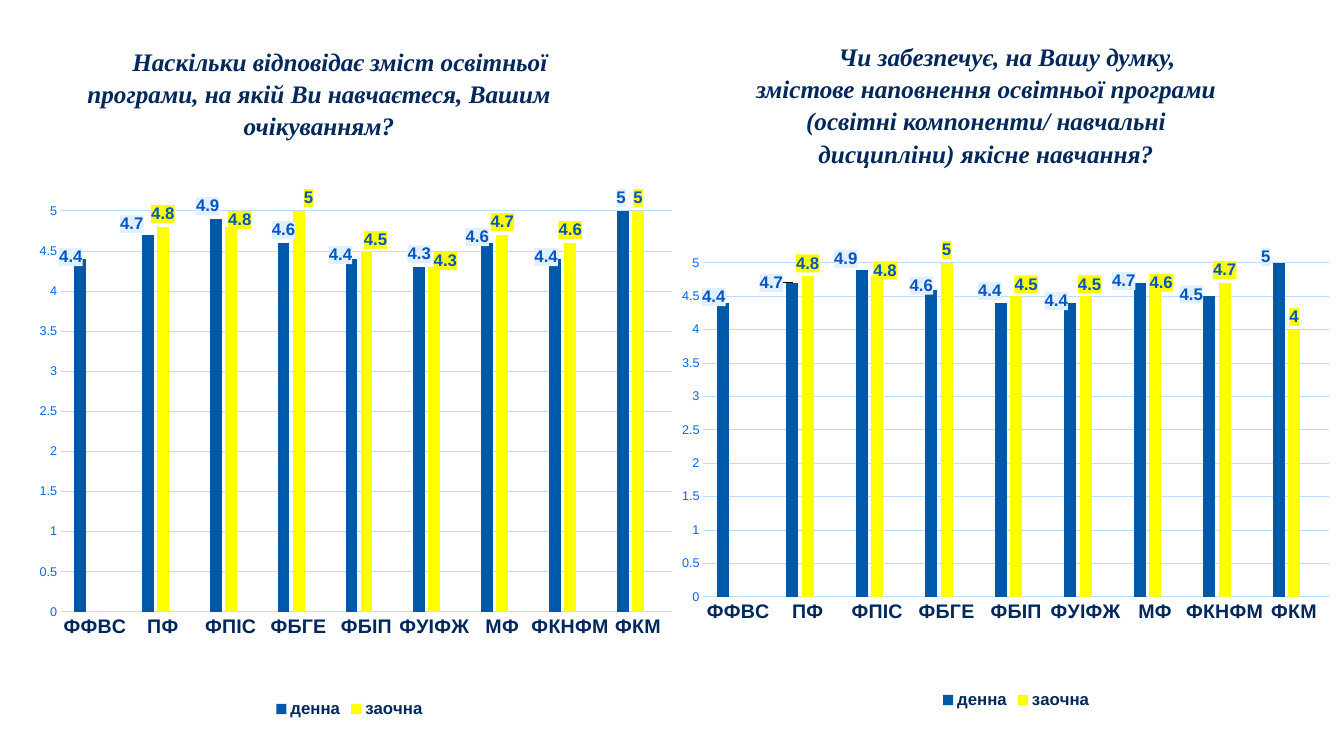
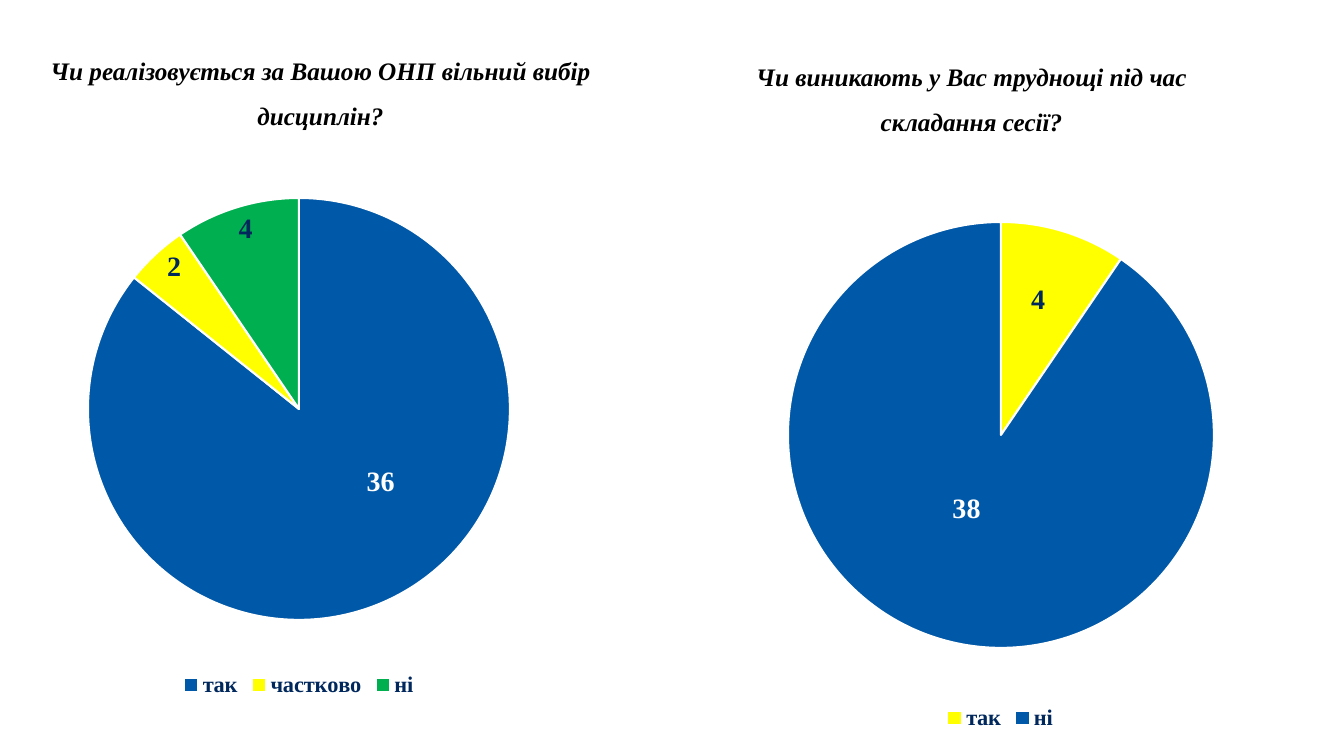
import lxml.etree
import pptx
import pptx.chart.data
import pptx.dml.color
import pptx.enum.chart
import pptx.enum.text
import pptx.oxml
import pptx.oxml.ns
import pptx.util

PX = 914400 / 100.8
SERIF, SANS = "Times New Roman", "Arial"
COLORS = {
    "navy": "01285C", "black": "000000", "white": "FFFFFF", "axis": "0367EC",
    "grid": "C1DBFE", "label": "0255C3", "pale": "E0F0FE", "blue": "0058A8",
    "yellow": "FFFF00", "green": "00B050",
}
FACULTIES = ["ФФВС", "ПФ", "ФПІС", "ФБГЕ", "ФБІП", "ФУІФЖ", "МФ", "ФКНФМ", "ФКМ"]
SERIES_STYLES = [("blue", "pale"), ("yellow", "yellow")]
PLAIN_TABLE = "{2D5ABB26-0587-4C30-8999-92F81FD0307C}"
NO_LEADERS = ('<c:extLst><c:ext uri="{CE6537A1-D6FC-4f65-9D91-7224C49458BB}" '
              'xmlns:c15="http://schemas.microsoft.com/office/drawing/2012/chart">'
              '<c15:showLeaderLines val="0"/></c:ext></c:extLst>')
qn = pptx.oxml.ns.qn


def px(n):
    """Turn pixels into EMU."""
    return pptx.util.Emu(round(n * PX))


def rgb(name):
    """Look up a palette colour."""
    return pptx.dml.color.RGBColor.from_string(COLORS[name])


def xml(markup):
    """Parse a chart fragment with its namespaces declared."""
    ns = pptx.oxml.ns.nsdecls("c", "a")
    head, tail = markup.split(">", 1)
    return pptx.oxml.parse_xml(f"{head} {ns}>{tail}")


def set_font(font, size, color, bold=False, italic=False, name=SANS):
    """Apply one text format to a font."""
    font.size, font.bold, font.italic, font.name = pptx.util.Pt(size), bold, italic, name
    font.color.rgb = rgb(color)


def add_text(slide, box, text, color="black", spacing=1.5, indent=0, middle=True):
    """Write a centred question heading in a box."""
    tf = slide.shapes.add_textbox(*map(px, box)).text_frame
    tf.word_wrap = True
    anchor = pptx.enum.text.MSO_ANCHOR
    tf.vertical_anchor = anchor.MIDDLE if middle else anchor.TOP
    p = tf.paragraphs[0]
    p.alignment = pptx.enum.text.PP_ALIGN.CENTER
    p.line_spacing, p.space_after = spacing, pptx.util.Pt(8)
    p._p.get_or_add_pPr().set("indent", str(px(indent)))
    r = p.add_run()
    r.text = text
    set_font(r.font, 18, color, True, True, SERIF)


def layout_table(slide, heights):
    """Add the clear two-column table that holds the charts."""
    box = (51, 165, 1260, sum(heights))
    table = slide.shapes.add_table(len(heights), 2, *map(px, box)).table
    table.first_row = table.horz_banding = False
    table._tbl.tblPr.find(qn("a:tableStyleId")).text = PLAIN_TABLE
    for row, height in zip(table.rows, heights):
        row.height = px(height)
    for cell in table.iter_cells():
        cell.fill.background()


def add_chart(slide, kind, box, plot, data, legend_font, hidden):
    """Add a chart with a fixed inner plot area and a bottom legend."""
    x, y, w, h = box
    chart = slide.shapes.add_chart(kind, *map(px, box), data).chart
    chart.has_title = False
    set_font(chart.font, 10, "navy")
    chart.has_legend = True
    chart.legend.position = pptx.enum.chart.XL_LEGEND_POSITION.BOTTOM
    chart.legend.include_in_layout = False
    set_font(chart.legend.font, **legend_font)
    position = chart.legend._element.find(qn("c:legendPos"))
    for i in reversed(hidden):
        position.addnext(xml(f'<c:legendEntry><c:idx val="{i}"/>'
                             '<c:delete val="1"/></c:legendEntry>'))
    area = chart._chartSpace.find(".//" + qn("c:plotArea"))
    for old in area.findall(qn("c:layout")):
        area.remove(old)
    parts = zip("xywh", ((plot[0] - x) / w, (plot[1] - y) / h, plot[2] / w, plot[3] / h))
    sizes = "".join(f'<c:{k} val="{v:.4f}"/>' for k, v in parts)
    area.insert(0, xml('<c:layout><c:manualLayout><c:layoutTarget val="inner"/>'
                       '<c:xMode val="edge"/><c:yMode val="edge"/>'
                       f"{sizes}</c:manualLayout></c:layout>"))
    return chart


def shift_labels(series, shifts, box):
    """Move point labels by pixel offsets from their usual place."""
    for label in series._element.iter(qn("c:dLbl")):
        idx = label.find(qn("c:idx"))
        dx, dy = shifts[int(idx.get("val"))]
        idx.addnext(xml(f'<c:layout><c:manualLayout><c:x val="{dx / box[2]:.4f}"/>'
                        f'<c:y val="{dy / box[3]:.4f}"/></c:manualLayout></c:layout>'))


def style_axes(chart):
    """Format the axes and gridlines of a column chart."""
    cat, val = chart.category_axis, chart.value_axis
    for axis in (cat, val):
        axis.major_tick_mark = axis.minor_tick_mark = pptx.enum.chart.XL_TICK_MARK.NONE
    set_font(cat.tick_labels.font, 14, "navy", True)
    set_font(val.tick_labels.font, 9, "axis")
    val.minimum_scale, val.maximum_scale, val.major_unit = 0, 5, 0.5
    val.format.line.fill.background()
    for line in (cat.format.line, val.major_gridlines.format.line):
        line.color.rgb, line.width = rgb("grid"), pptx.util.Pt(0.75)


def column_panel(slide, box, plot, values, shifts):
    """Draw a column chart comparing full-time and part-time students."""
    data = pptx.chart.data.CategoryChartData()
    data.categories = FACULTIES
    for name, vals in zip(("денна", "заочна"), values):
        data.add_series(name, vals)
    data.add_series("Series 3", [None] * len(FACULTIES))
    chart = add_chart(slide, pptx.enum.chart.XL_CHART_TYPE.COLUMN_CLUSTERED, box, plot,
                      data, dict(size=12, color="navy", bold=True), [2])
    style_axes(chart)
    bars = chart.plots[0]
    bars.vary_by_categories, bars.gap_width, bars.overlap = False, 219, -27
    outside = pptx.enum.chart.XL_LABEL_POSITION.OUTSIDE_END
    for s, (color, back), moves in zip(bars.series, SERIES_STYLES, shifts):
        s.format.fill.solid()
        s.format.fill.fore_color.rgb = rgb(color)
        s.data_labels.show_value = True
        for d in [s.data_labels] + [s.points[i].data_label for i in moves]:
            set_font(d.font, 12, "label", True)
            d.position = outside
        shift_labels(s, moves, box)
        labels = s._element.find(qn("c:dLbls"))
        for tx in list(labels.iter(qn("c:txPr"))):
            for old in tx.getparent().findall(qn("c:spPr")):
                tx.getparent().remove(old)
            tx.addprevious(xml("<c:spPr><a:solidFill>"
                               f'<a:srgbClr val="{COLORS[back]}"/></a:solidFill></c:spPr>'))
        if s.values[0] == 0:
            labels.insert(0, xml('<c:dLbl><c:idx val="0"/><c:delete val="1"/></c:dLbl>'))
        labels.append(xml(NO_LEADERS))


def pie_panel(slide, box, plot, slices, shifts):
    """Draw a pie chart from (name, value, fill, label colour) slices."""
    data = pptx.chart.data.CategoryChartData()
    data.categories = [name for name, *_ in slices]
    spare = range(len(slices), 4)
    data.add_series("Series 1", [value for _, value, *_ in slices] + [None for _ in spare])
    chart = add_chart(slide, pptx.enum.chart.XL_CHART_TYPE.PIE, box, plot, data,
                      dict(size=16, color="navy", bold=True, name=SERIF), spare)
    s = chart.plots[0].series[0]
    s.data_labels.show_value = True
    place = pptx.enum.chart.XL_LABEL_POSITION
    for i, (_, _, color, text) in enumerate(slices):
        point = s.points[i]
        point.format.fill.solid()
        point.format.fill.fore_color.rgb = rgb(color)
        point.format.line.color.rgb = rgb("white")
        point.format.line.width = pptx.util.Pt(1.5)
        set_font(point.data_label.font, 20, text, True, name=SERIF)
        point.data_label.position = place.CENTER if any(shifts[i]) else place.INSIDE_END
    shift_labels(s, shifts, box)


def content_slide(prs):
    """Draw the two questions on programme content."""
    slide = prs.slides.add_slide(prs.slide_layouts[6])
    style = dict(color="navy", spacing=1.07, indent=42)
    add_text(slide, (75, 52, 488, 81),
             "Наскільки відповідає зміст освітньої програми, на якій Ви навчаєтеся, "
             "Вашим очікуванням?", **style)
    layout_table(slide, (195, 205, 170))
    add_text(slide, (742, 63, 488, 81),
             "Чи забезпечує, на Вашу думку, змістове наповнення освітньої програми "
             "(освітні компоненти/ навчальні дисципліни) якісне навчання?", **style)
    column_panel(
        slide, (18, 185, 663, 537), (61, 211, 611, 401),
        [(4.4, 4.7, 4.9, 4.6, 4.4, 4.3, 4.6, 4.4, 5), (0, 4.8, 4.8, 5, 4.5, 4.3, 4.7, 4.6, 5)],
        [{0: (-9, 11), 1: (-16, 2), 2: (-8, 0), 4: (-11, 9), 6: (-10, 7), 7: (-9, 11),
          8: (-2, 0)},
         {2: (9, 6), 3: (10, 0), 4: (9, 2), 5: (11, 7)}])
    column_panel(
        slide, (682, 185, 668, 528), (703, 263, 626, 334),
        [(4.4, 4.7, 4.9, 4.6, 4.4, 4.4, 4.7, 4.5, 5), (0, 4.8, 4.8, 5, 4.5, 4.5, 4.6, 4.7, 4)],
        [{0: (-9, 7), 1: (-21, 13), 2: (-16, 2), 3: (-10, 9), 4: (-11, 1), 5: (-14, 11),
          6: (-16, 11), 7: (-18, 11), 8: (-13, 7)},
         {2: (8, 7), 4: (10, 1), 5: (4, 1), 6: (6, 6)}])


def choice_slide(prs):
    """Draw the questions on free choice and exam difficulties."""
    slide = prs.slides.add_slide(prs.slide_layouts[6])
    add_text(slide, (699, 51, 545, 81), "Чи виникають у Вас труднощі під час складання сесії?")
    layout_table(slide, (195, 205, 138))
    add_text(slide, (-15, 35, 671, 97),
             "Чи реалізовується за Вашою ОНП вільний вибір дисциплін?", middle=False)
    pie_panel(slide, (672, 176, 657, 559), (788, 222, 426, 426),
              [("так", 4, "yellow", "navy"), ("ні", 38, "blue", "white")],
              [(6, -33), (-3, -28)])
    pie_panel(slide, (-40, 176, 678, 526), (88, 198, 422, 422),
              [("так", 36, "blue", "white"), ("частково", 2, "yellow", "navy"),
               ("ні", 4, "green", "navy")], [(36, -22), (-53, -65), (0, 0)])


def main():
    """Build and save the presentation."""
    prs = pptx.Presentation()
    prs.slide_width, prs.slide_height = px(1344), px(756)
    content_slide(prs)
    choice_slide(prs)
    prs.save("out.pptx")


if __name__ == "__main__":
    main()
